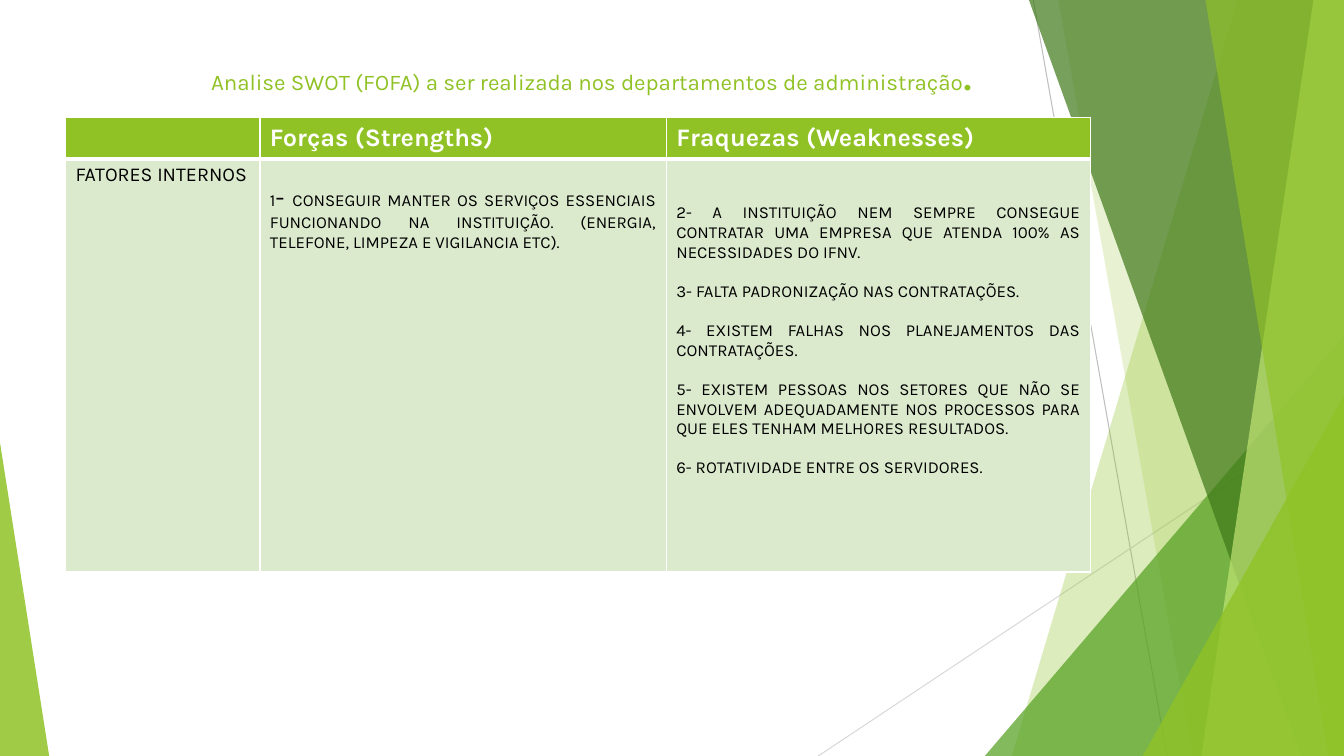
from lxml import etree
from pptx import Presentation
from pptx.dml.color import RGBColor
from pptx.enum.shapes import MSO_CONNECTOR, MSO_SHAPE
from pptx.enum.text import MSO_ANCHOR, MSO_AUTO_SIZE, PP_ALIGN
from pptx.oxml import parse_xml
from pptx.oxml.ns import nsdecls, qn
from pptx.util import Cm, Pt

GREEN = RGBColor(0x90, 0xC2, 0x26)
MID_GREEN = RGBColor(0x54, 0xA0, 0x21)
DARK_GREEN = RGBColor(0x3F, 0x78, 0x19)
LIME = RGBColor(0xC0, 0xE4, 0x74)
PALE_GREEN = RGBColor(0xDB, 0xE9, 0xCD)
GRAY = RGBColor(0xBF, 0xBF, 0xBF)
LIGHT_GRAY = RGBColor(0xD9, 0xD9, 0xD9)
WHITE = RGBColor(0xFF, 0xFF, 0xFF)
BLACK = RGBColor(0, 0, 0)

WIDTH, HEIGHT = 33.87, 19.05

STRENGTHS = [[
    ("1", 12), ("- ", 18),
    ("CONSEGUIR MANTER OS SERVIÇOS ESSENCIAIS FUNCIONANDO NA INSTITUIÇÃO. "
     "(ENERGIA, TELEFONE, LIMPEZA E VIGILANCIA ETC).", 12),
]]
WEAKNESSES = [[(text, 12)] for text in (
    "2- A INSTITUIÇÃO NEM SEMPRE CONSEGUE CONTRATAR UMA EMPRESA QUE ATENDA "
    "100% AS NECESSIDADES DO IFNV.",
    "3- FALTA PADRONIZAÇÃO NAS CONTRATAÇÕES.",
    "4- EXISTEM FALHAS NOS PLANEJAMENTOS DAS CONTRATAÇÕES.",
    "5- EXISTEM PESSOAS NOS SETORES QUE NÃO SE ENVOLVEM ADEQUADAMENTE NOS "
    "PROCESSOS PARA QUE ELES TENHAM MELHORES RESULTADOS.",
    "6- ROTATIVIDADE ENTRE OS SERVIDORES.",
)]


class SlideBuilder:
    font = "Karla"

    def __init__(self, prs):
        self.s = prs.slides.add_slide(prs.slide_layouts[5])

    def line(self, x1, y1, x2, y2, color):
        ln = self.s.shapes.add_connector(
            MSO_CONNECTOR.STRAIGHT, Cm(x1), Cm(y1), Cm(x2), Cm(y2))
        ln.line.color.rgb = color
        ln.line.width = Pt(0.75)
        etree.SubElement(ln.element.spPr, qn("a:effectLst"))

    def paint(self, sp, color, opacity):
        sp.shadow.inherit = False
        sp.line.fill.background()
        sp.fill.solid()
        sp.fill.fore_color.rgb = color
        clr = sp.element.spPr.find(qn("a:solidFill"))[0]
        etree.SubElement(clr, qn("a:alpha"), val=str(opacity * 1000))

    def band(self, top_x, bottom_x, color, opacity):
        fb = self.s.shapes.build_freeform(Cm(top_x), 0)
        fb.add_line_segments([
            (Cm(WIDTH), 0), (Cm(WIDTH), Cm(HEIGHT)), (Cm(bottom_x), Cm(HEIGHT))])
        self.paint(fb.convert_to_shape(), color, opacity)

    def triangle(self, left, top, width, apex, color, opacity):
        sp = self.s.shapes.add_shape(
            MSO_SHAPE.ISOSCELES_TRIANGLE,
            Cm(left), Cm(top), Cm(width), Cm(HEIGHT - top))
        sp.adjustments[0] = apex
        self.paint(sp, color, opacity)

    def add_runs(self, p, runs, color, bold=False, align=PP_ALIGN.LEFT):
        p.alignment = align
        p.font.name = self.font
        p.font.color.rgb = color
        p.font.bold = bold
        for text, size in runs:
            r = p.add_run()
            r.text = text
            r.font.size = Pt(size)

    def title(self, left, top, width, height, runs):
        sp = self.s.shapes.title
        sp.left, sp.top, sp.width, sp.height = map(Cm, (left, top, width, height))
        sp.element.getparent().append(sp.element)
        tf = sp.text_frame
        tf.word_wrap = True
        tf.auto_size = MSO_AUTO_SIZE.NONE
        tf.vertical_anchor = MSO_ANCHOR.MIDDLE
        self.add_runs(tf.paragraphs[0], runs, GREEN, align=PP_ALIGN.CENTER)

    def table(self, left, top, cols, rows):
        frame = self.s.shapes.add_table(
            len(rows), len(cols), Cm(left), Cm(top), Cm(sum(cols)), Cm(sum(rows)))
        tb = frame.table
        tb.horz_banding = False
        for col, width in zip(tb.columns, cols):
            col.width = Cm(width)
        for row, height in zip(tb.rows, rows):
            row.height = Cm(height)
        return tb

    def cell(self, cell, fill, bottom, paragraphs=(), color=BLACK, bold=False,
             align=PP_ALIGN.LEFT, margin_top=0.13):
        cell.fill.solid()
        cell.fill.fore_color.rgb = fill
        cell.margin_top = Cm(margin_top)
        tc_pr = cell._tc.get_or_add_tcPr()
        for i, (side, width) in enumerate(
                (("L", 1), ("R", 1), ("T", 1), ("B", bottom))):
            tc_pr.insert(i, parse_xml(
                f'<a:ln{side} {nsdecls("a")} w="{Pt(width)}"><a:solidFill>'
                f'<a:srgbClr val="{WHITE}"/></a:solidFill></a:ln{side}>'))
        tf = cell.text_frame
        for i, runs in enumerate(paragraphs):
            p = tf.add_paragraph() if i else tf.paragraphs[0]
            if i:
                p.space_before = Pt(14)
            self.add_runs(p, runs, color, bold, align)


def main():
    prs = Presentation()
    prs.slide_width, prs.slide_height = Cm(WIDTH), Cm(HEIGHT)
    b = SlideBuilder(prs)

    b.line(26.04, 0, 29.41, HEIGHT, GRAY)
    b.line(WIDTH, 10.24, 20.62, HEIGHT, LIGHT_GRAY)
    b.band(31.19, 25.5, GREEN, 30)
    b.band(26.67, 30.05, GREEN, 20)
    b.triangle(24.82, 8.46, 9.05, 1, MID_GREEN, 72)
    b.band(25.93, 32.79, DARK_GREEN, 70)
    b.band(33.1, 30.28, LIME, 70)
    b.band(30.38, 33.48, GREEN, 65)
    b.triangle(28.8, 9.98, 5.07, 1, GREEN, 80)
    b.triangle(0, 11.15, 1.24, 0, GREEN, 85)

    b.title(2.57, 0.74, 24.69, 2.06, [
        ("Analise SWOT (FOFA) a ser realizada nos departamentos de administração", 16),
        (".", 36)])

    tb = b.table(1.65, 2.97, [4.9, 10.24, 10.69], [0.99, 10.41])
    for col, heading in enumerate(("", "Forças (Strengths)", "Fraquezas (Weaknesses)")):
        paragraphs = [[(heading, 18)]] if heading else []
        b.cell(tb.cell(0, col), GREEN, 3, paragraphs, WHITE, bold=True)
    b.cell(tb.cell(1, 0), PALE_GREEN, 1, [[("FATORES INTERNOS", 14)]])
    b.cell(tb.cell(1, 1), PALE_GREEN, 1, STRENGTHS,
           align=PP_ALIGN.JUSTIFY, margin_top=0.62)
    b.cell(tb.cell(1, 2), PALE_GREEN, 1, WEAKNESSES,
           align=PP_ALIGN.JUSTIFY, margin_top=1.12)
    prs.save("out.pptx")


if __name__ == "__main__":
    main()
